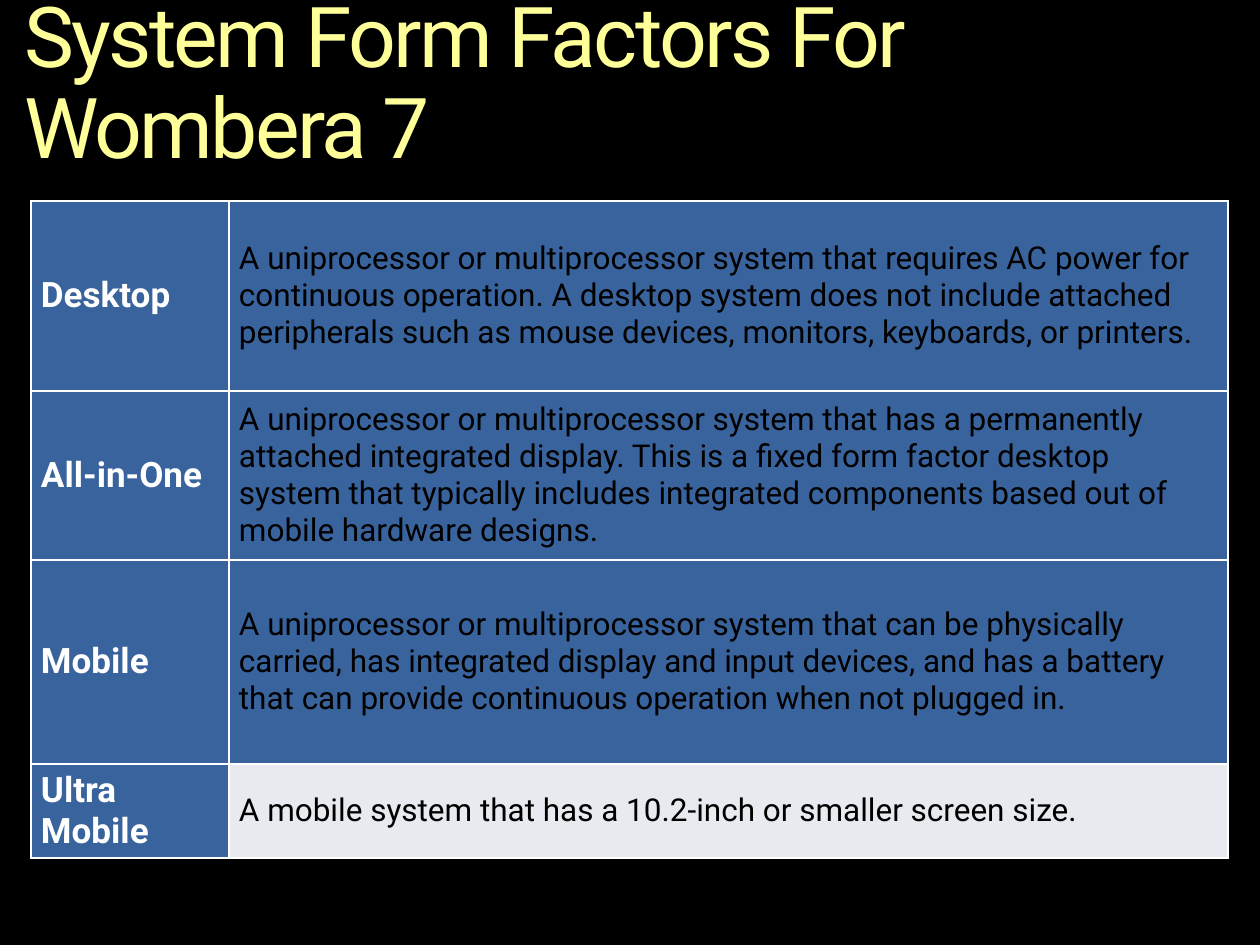
import pptx
import pptx.util
import pptx.dml.color
import pptx.enum.text
import pptx.oxml
import pptx.oxml.ns

RGB = pptx.dml.color.RGBColor
BLACK = RGB(0x00, 0x00, 0x00)
WHITE = RGB(0xFF, 0xFF, 0xFF)
BLUE = RGB(0x39, 0x63, 0x9D)
PALE = RGB(0xE8, 0xEA, 0xEF)
TITLE_STOPS = [(0, RGB(0xFF, 0xFF, 0xB9)), (36, RGB(0xFF, 0xFF, 0x99)),
               (86, RGB(0xF6, 0xAE, 0x1E))]

FONT = "Roboto"
Pt = pptx.util.Pt
MIDDLE = pptx.enum.text.MSO_ANCHOR.MIDDLE
NS = pptx.oxml.ns.nsdecls("a")

TITLE = "System Form Factors For Wombera 7"
COLUMNS = [198, 999]
# Row height, form factor, description, description fill
ROWS = [
    (190, "Desktop",
     "A uniprocessor or multiprocessor system that requires AC power for "
     "continuous operation. A desktop system does not include attached "
     "peripherals such as mouse devices, monitors, keyboards, or printers.",
     BLUE),
    (169, "All-in-One",
     "A uniprocessor or multiprocessor system that has a permanently "
     "attached integrated display. This is a fixed form factor desktop "
     "system that typically includes integrated components based out of "
     "mobile hardware designs.", BLUE),
    (204, "Mobile",
     "A uniprocessor or multiprocessor system that can be physically "
     "carried, has integrated display and input devices, and has a battery "
     "that can provide continuous operation when not plugged in.", BLUE),
    (94, "Ultra Mobile",
     "A mobile system that has a 10.2-inch or smaller screen size.", PALE),
]
NAME_FORMAT = {"name": FONT, "size": Pt(20), "bold": True}
TEXT_FORMAT = {"name": FONT, "size": Pt(18), "bold": False}


def px(n):
    return pptx.util.Emu(round(n * 914400 / 126))


def set_attrs(obj, values):
    for name, value in values.items():
        setattr(obj, name, value)


def add_title(s, x, y, w, h):
    sp = s.shapes.title
    set_attrs(sp, {"left": px(x), "top": px(y), "width": px(w), "height": px(h)})
    tf = sp.text_frame
    set_attrs(tf, {"margin_left": 0, "margin_right": 0, "margin_top": 0,
                   "margin_bottom": 0, "vertical_anchor": MIDDLE,
                   "word_wrap": True,
                   "auto_size": pptx.enum.text.MSO_AUTO_SIZE.NONE})
    p = tf.paragraphs[0]
    set_attrs(p, {"alignment": pptx.enum.text.PP_ALIGN.LEFT, "line_spacing": 0.9})
    r = p.add_run()
    r.text = TITLE
    set_attrs(r.font, {"name": FONT, "size": Pt(48), "bold": False})
    # Tight letter spacing and a vertical gradient on the letters
    rpr = r._r.get_or_add_rPr()
    rpr.set("spc", "-150")
    stops = "".join(f'<a:gs pos="{pos * 1000}"><a:srgbClr val="{color}"/></a:gs>'
                    for pos, color in TITLE_STOPS)
    rpr.insert(0, pptx.oxml.parse_xml(
        f'<a:gradFill {NS}><a:gsLst>{stops}</a:gsLst>'
        '<a:lin ang="5400000" scaled="0"/></a:gradFill>'))


def fill_cell(cell, text, font_format, color, fill):
    tcpr = cell._tc.get_or_add_tcPr()
    for side in "LRTB":
        tcpr.append(pptx.oxml.parse_xml(
            f'<a:ln{side} {NS} w="12700"><a:solidFill>'
            f'<a:srgbClr val="{WHITE}"/></a:solidFill></a:ln{side}>'))
    cell.fill.solid()
    cell.fill.fore_color.rgb = fill
    set_attrs(cell, {"margin_left": px(10), "margin_right": px(10),
                     "margin_top": 0, "margin_bottom": 0,
                     "vertical_anchor": MIDDLE})
    r = cell.text_frame.paragraphs[0].add_run()
    r.text = text
    set_attrs(r.font, font_format)
    r.font.color.rgb = color


def add_form_factors(s, x, y):
    height = sum(row[0] for row in ROWS)
    table = s.shapes.add_table(len(ROWS), len(COLUMNS), px(x), px(y),
                               px(sum(COLUMNS)), px(height)).table
    set_attrs(table, {"first_row": False, "horz_banding": False})
    for col, width in zip(table.columns, COLUMNS):
        col.width = px(width)
    for i, (row_height, name, text, fill) in enumerate(ROWS):
        table.rows[i].height = px(row_height)
        fill_cell(table.cell(i, 0), name, NAME_FORMAT, WHITE, BLUE)
        fill_cell(table.cell(i, 1), text, TEXT_FORMAT, BLACK, fill)


def main():
    prs = pptx.Presentation()
    set_attrs(prs, {"slide_width": px(1260), "slide_height": px(945)})
    s = prs.slides.add_slide(prs.slide_layouts[5])
    s.background.fill.solid()
    s.background.fill.fore_color.rgb = BLACK
    add_title(s, 24, 18, 1216, 135)
    add_form_factors(s, 31, 201)
    prs.save("out.pptx")


if __name__ == "__main__":
    main()
